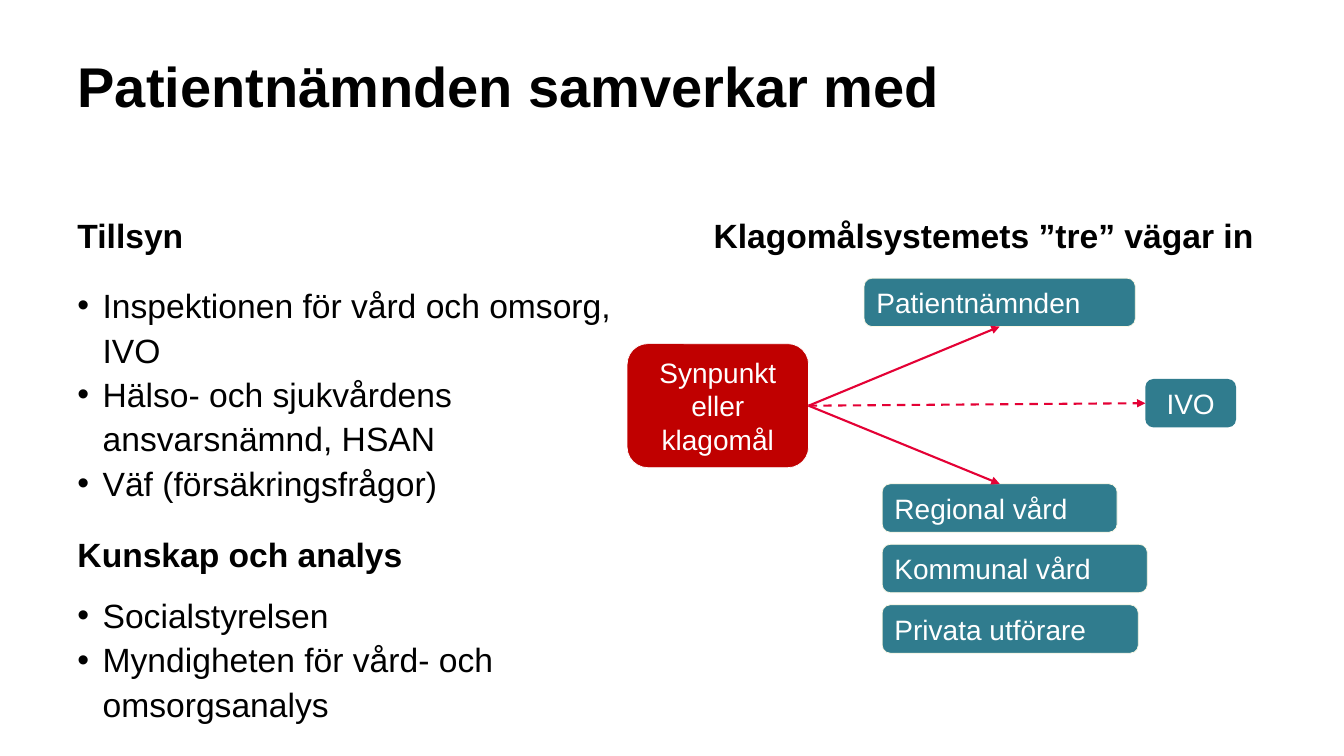
from lxml import etree
from pptx import Presentation
from pptx.dml.color import RGBColor
from pptx.enum.dml import MSO_LINE as Dash
from pptx.enum.shapes import MSO_CONNECTOR as Link, MSO_SHAPE as Form
from pptx.enum.text import MSO_ANCHOR as Anchor, MSO_AUTO_SIZE as Fit, PP_ALIGN as Align
from pptx.oxml.ns import qn
from pptx.util import Inches, Pt

BLACK, WHITE, CREAM = "000000", "FFFFFF", "FDF9E4"
TEAL, RED, PINK = "307C8E", "C00000", "E40135"
TOP, RIGHT, BOTTOM, LEFT = 0, 3, 2, 1  # connection sites


def color(code):
    return RGBColor.from_string(code)


def style(para, size, code=BLACK, bold=False):
    for run in para.runs:
        font = run.font
        font.name, font.size, font.bold = "Arial", Pt(size), bold
        font.color.rgb = color(code)


def place(shape, box):
    shape.left, shape.top, shape.width, shape.height = map(Inches, box)


def bullet(para):
    props = para._p.get_or_add_pPr()
    props.set("marL", str(Inches(0.25)))
    props.set("indent", str(Inches(-0.25)))
    etree.SubElement(props, qn("a:buFont")).set("typeface", "Arial")
    etree.SubElement(props, qn("a:buChar")).set("char", "•")


def add_title(slide, box, text):
    title = slide.shapes.title
    place(title, box)
    frame = title.text_frame
    frame.text = text
    frame.auto_size, frame.vertical_anchor = Fit.NONE, Anchor.TOP
    para = frame.paragraphs[0]
    para.alignment, para.line_spacing = Align.LEFT, 1.1
    style(para, 40, bold=True)


def add_text(slide, box, text, anchor):
    frame = slide.shapes.add_textbox(*map(Inches, box)).text_frame
    frame.word_wrap, frame.vertical_anchor = True, anchor
    frame.text = text
    return frame.paragraphs


def add_head(slide, box, text, pitch=0.9):
    para = add_text(slide, box, text, Anchor.BOTTOM)[0]
    para.line_spacing = pitch
    style(para, 24, bold=True)


def add_list(slide, box, groups):
    """Bulleted groups, with room for a heading between them."""
    text = "\n".join(item for group in groups for item in group)
    paras = add_text(slide, box, text, Anchor.TOP)
    for para in paras:
        para.line_spacing = 1.1
        bullet(para)
        style(para, 24)
    start = 0
    for group in groups[:-1]:
        start += len(group)
        paras[start].space_before = Pt(63)


def add_node(slide, box, text, fill=TEAL, edge=CREAM, align=Align.LEFT):
    node = slide.shapes.add_shape(Form.ROUNDED_RECTANGLE, *map(Inches, box))
    node.shadow.inherit = False
    node.fill.solid()
    node.fill.fore_color.rgb = color(fill)
    if edge:
        node.line.color.rgb = color(edge)
        node.line.width = Pt(0.5)
    else:
        node.line.fill.background()
    frame = node.text_frame
    frame.text, frame.word_wrap = text, True
    para = frame.paragraphs[0]
    para.alignment = align
    style(para, 20, WHITE)
    return node


def add_arrow(slide, start, end, site, dash=None):
    arrow = slide.shapes.add_connector(Link.STRAIGHT, 0, 0, 0, 0)
    arrow.begin_connect(start, RIGHT)
    arrow.end_connect(end, site)
    line = arrow.line
    line.color.rgb, line.width = color(PINK), Pt(1.5)
    if dash:
        line.dash_style = dash
    etree.SubElement(line._get_or_add_ln(), qn("a:tailEnd")).set("type", "triangle")
    etree.SubElement(arrow._element.spPr, qn("a:effectLst"))


def add_left(slide, x, y, width):
    add_head(slide, (x, y, width, 0.9), "Tillsyn")
    add_list(slide, (x, y + 1.05, width, 4.03), [
        ["Inspektionen för vård och omsorg, IVO",
         "Hälso- och sjukvårdens ansvarsnämnd, HSAN",
         "Väf (försäkringsfrågor)"],
        ["Socialstyrelsen", "Myndigheten för vård- och omsorgsanalys"],
    ])
    add_head(slide, (x, y + 3.36, 5.89, 0.7), "Kunskap och analys", 1)


def add_paths(slide, x, y):
    """Complaint box with arrows to the ways in."""
    source = add_node(slide, (x, y + 0.65, 1.8, 1.23), "Synpunkt eller klagomål",
                      RED, WHITE, Align.CENTER)
    board = add_node(slide, (x + 2.35, y, 2.69, 0.48), "Patientnämnden")
    ivo = add_node(slide, (x + 5.14, y + 1, 0.9, 0.48), "IVO",
                   edge=None, align=Align.CENTER)
    care = [("Regional vård", 2.33), ("Kommunal vård", 2.63), ("Privata utförare", 2.54)]
    nodes = [add_node(slide, (x + 2.53, y + 2.04 + 0.6 * i, width, 0.48), text)
             for i, (text, width) in enumerate(care)]
    add_arrow(slide, source, board, BOTTOM)
    add_arrow(slide, source, nodes[0], TOP)
    add_arrow(slide, source, ivo, LEFT, Dash.DASH)


def main():
    deck = Presentation()
    deck.slide_width, deck.slide_height = Inches(13.33), Inches(7.5)
    slide = deck.slides.add_slide(deck.slide_layouts[5])
    add_title(slide, (0.67, 0.39, 12, 1.25), "Patientnämnden samverkar med")
    add_left(slide, 0.67, 1.69, 5.64)
    add_head(slide, (6.98, 1.69, 5.67, 0.9), "Klagomålsystemets ”tre” vägar in")
    add_paths(slide, 6.22, 2.76)
    deck.save("out.pptx")


if __name__ == "__main__":
    main()
